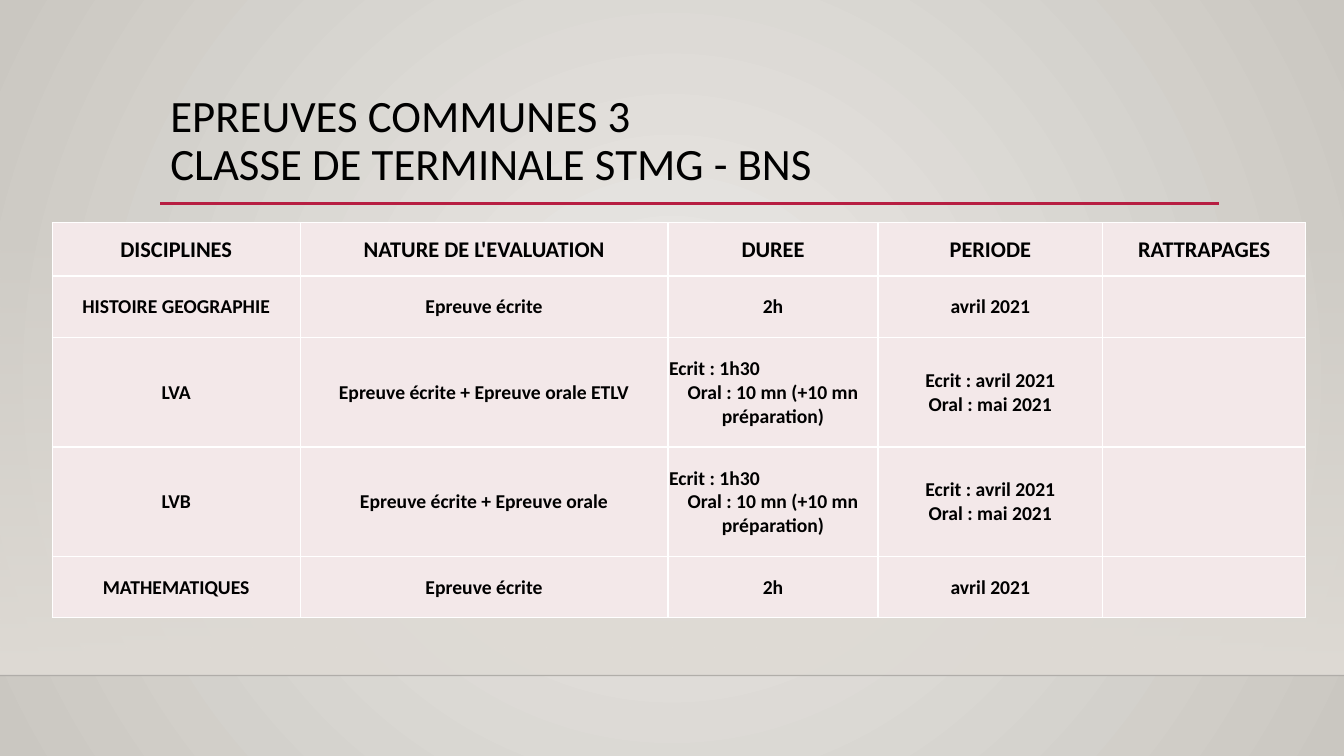
import pptx
import pptx.util
import pptx.dml.color
import pptx.enum.shapes
import pptx.enum.text
import pptx.oxml
import pptx.oxml.ns
from lxml import etree

Pt = pptx.util.Pt
qn = pptx.oxml.ns.qn
ALIGN = pptx.enum.text.PP_ALIGN
ANCHOR = pptx.enum.text.MSO_ANCHOR

COLORS = {
    "center": "ECEAE7",
    "edge": "CAC7C1",
    "floor": "DFDBD5",
    "horizon": "000001",
    "accent": "B71E42",
    "text": "000000",
    "cell": "F3E8E9",
    "border": "FFFFFF",
}


def rgb(name):
    return pptx.dml.color.RGBColor.from_string(COLORS[name])


def set_alpha(element, percent):
    color = next(element.iter(qn("a:srgbClr")))
    etree.SubElement(color, qn("a:alpha"), val=str(percent * 1000))


class SlideBuilder:
    font = "Calibri"

    def __init__(self, deck):
        self.page = deck.slides.add_slide(deck.slide_layouts[5])

    def background(self, inner, outer):
        fill = self.page.background.fill
        fill.gradient()
        for stop, name in zip(fill.gradient_stops, (inner, outer)):
            stop.color.rgb = rgb(name)
        gradient = next(self.page.element.iter(qn("a:gradFill")))
        gradient.remove(gradient.find(qn("a:lin")))
        circle = etree.SubElement(gradient, qn("a:path"), path="circle")
        sides = {side: "50000" for side in "ltrb"}
        etree.SubElement(circle, qn("a:fillToRect"), **sides)

    def fade(self, left, top, width, height, color):
        box = self.page.shapes.add_shape(
            pptx.enum.shapes.MSO_SHAPE.RECTANGLE,
            Pt(left), Pt(top), Pt(width), Pt(height))
        box.shadow.inherit = False
        box.line.fill.background()
        box.fill.gradient()
        box.fill.gradient_angle = 270
        for stop in box.fill.gradient_stops:
            stop.color.rgb = rgb(color)
        set_alpha(next(box.element.iter(qn("a:gs"))), 0)

    def rule(self, left, right, top, color, weight, opacity=100):
        line = self.page.shapes.add_connector(
            pptx.enum.shapes.MSO_CONNECTOR.STRAIGHT,
            Pt(left), Pt(top), Pt(right), Pt(top))
        line.line.color.rgb = rgb(color)
        line.line.width = Pt(weight)
        properties = line.element.spPr
        if opacity < 100:
            set_alpha(properties, opacity)
        etree.SubElement(properties, qn("a:effectLst"))

    def style(self, para, size, bold, align):
        para.alignment = align
        para.font.name = self.font
        para.font.size = Pt(size)
        para.font.bold = bold
        para.font.color.rgb = rgb("text")

    def title(self, left, top, width, height, lines, size):
        box = self.page.shapes.title
        box.left, box.top, box.width, box.height = map(Pt, (left, top, width, height))
        frame = box.text_frame
        frame.word_wrap = True
        frame.auto_size = pptx.enum.text.MSO_AUTO_SIZE.NONE
        frame.vertical_anchor = ANCHOR.TOP
        para = frame.paragraphs[0]
        for index, line in enumerate(lines):
            if index:
                para.add_line_break()
            para.add_run().text = line
        para.line_spacing = 0.9
        self.style(para, size, False, ALIGN.LEFT)

    def border(self, cell):
        properties = cell._tc.get_or_add_tcPr()
        for index, side in enumerate(("lnL", "lnR", "lnT", "lnB")):
            line = etree.Element(qn("a:" + side), w=str(Pt(1)))
            fill = etree.SubElement(line, qn("a:solidFill"))
            etree.SubElement(fill, qn("a:srgbClr"), val=COLORS["border"])
            properties.insert(index, line)

    def cell(self, cell, lines, size):
        cell.fill.solid()
        cell.fill.fore_color.rgb = rgb("cell")
        self.border(cell)
        cell.vertical_anchor = ANCHOR.MIDDLE
        cell.margin_left = cell.margin_right = cell.margin_top = Pt(0.7)
        cell.margin_bottom = Pt(0)
        cell.text_frame.text = "\n".join(lines)
        for para in cell.text_frame.paragraphs:
            left = para.text == WRITTEN_TIME
            self.style(para, size, True, ALIGN.LEFT if left else ALIGN.CENTER)

    def table(self, left, top, widths, heights, rows):
        table = self.page.shapes.add_table(
            len(rows), len(widths), Pt(left), Pt(top),
            Pt(sum(widths)), Pt(sum(heights))).table
        for column, width in zip(table.columns, widths):
            column.width = Pt(width)
        for index, (row, height, texts) in enumerate(zip(table.rows, heights, rows)):
            row.height = Pt(height)
            for cell, lines in zip(row.cells, texts):
                self.cell(cell, lines, 14 if index else 16)


WRITTEN_TIME = "Ecrit : 1h30"
WRITTEN = [["Epreuve écrite"], ["2h"], ["avril 2021"], []]
LANGUAGE = [
    [WRITTEN_TIME, "Oral : 10 mn (+10 mn préparation)"],
    ["Ecrit : avril 2021", "Oral : mai 2021"],
    [],
]
ROWS = [
    [["DISCIPLINES"], ["NATURE DE L'EVALUATION"], ["DUREE"], ["PERIODE"], ["RATTRAPAGES"]],
    [["HISTOIRE GEOGRAPHIE"], *WRITTEN],
    [["LVA"], ["Epreuve écrite + Epreuve orale ETLV"], *LANGUAGE],
    [["LVB"], ["Epreuve écrite + Epreuve orale"], *LANGUAGE],
    [["MATHEMATIQUES"], *WRITTEN],
]


def main():
    deck = pptx.Presentation()
    deck.slide_width, deck.slide_height = Pt(960), Pt(540)
    slide = SlideBuilder(deck)
    slide.background("center", "edge")
    slide.fade(0, 159, 960, 323.5, "floor")
    slide.rule(0, 960, 482.5, "horizon", 1, opacity=20)
    slide.rule(114.5, 871, 145.3, "accent", 2.5)
    slide.title(114.5, 63.4, 756, 82.8,
                ["EPREUVES COMMUNES 3", "CLASSE DE TERMINALE STMG - BNS"], 32)
    slide.table(37.4, 159, [177, 262.8, 150, 160.5, 145],
                [38.2, 43.9, 78.2, 78.2, 43.9], ROWS)
    deck.save("out.pptx")


if __name__ == "__main__":
    main()
